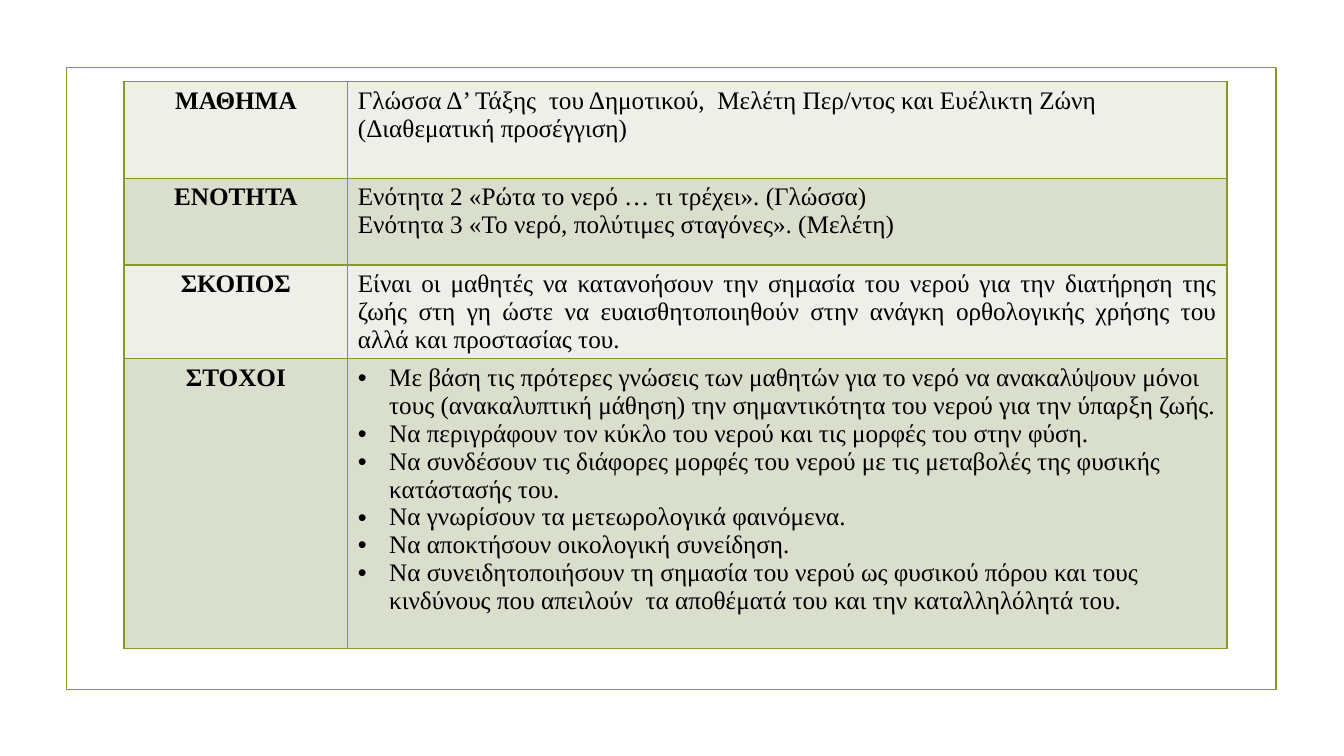
from lxml import etree
from pptx import Presentation
from pptx.dml.color import RGBColor
from pptx.enum.shapes import MSO_SHAPE
from pptx.enum.text import PP_ALIGN
from pptx.oxml.ns import qn
from pptx.util import Inches, Pt

RECT = MSO_SHAPE.RECTANGLE
LEFT, CENTER, JUST = PP_ALIGN.LEFT, PP_ALIGN.CENTER, PP_ALIGN.JUSTIFY
FONT = "Times New Roman"
COLORS = {"olive": "83992A", "light": "EDEFE8", "dark": "D9DECD", "text": "000000"}

# Label, row height, alignment, bulleted, paragraphs
ROWS = [
    ("ΜΑΘΗΜΑ", 0.96, LEFT, False, [
        "Γλώσσα Δ’ Τάξης  του Δημοτικού,  Μελέτη Περ/ντος και Ευέλικτη Ζώνη "
        "(Διαθεματική προσέγγιση)"]),
    ("ΕΝΟΤΗΤΑ", 0.86, LEFT, False, [
        "Ενότητα 2 «Ρώτα το νερό … τι τρέχει». (Γλώσσα)",
        "Ενότητα 3 «Το νερό, πολύτιμες σταγόνες». (Μελέτη)"]),
    ("ΣΚΟΠΟΣ", 0.93, JUST, False, [
        "Είναι οι μαθητές να κατανοήσουν την σημασία του νερού για την διατήρηση "
        "της ζωής στη γη ώστε να ευαισθητοποιηθούν στην ανάγκη ορθολογικής χρήσης "
        "του αλλά και προστασίας του."]),
    ("ΣΤΟΧΟΙ", 2.87, LEFT, True, [
        "Με βάση τις πρότερες γνώσεις των μαθητών για το νερό να ανακαλύψουν μόνοι "
        "τους (ανακαλυπτική μάθηση) την σημαντικότητα του νερού για την ύπαρξη ζωής.",
        "Να περιγράφουν τον κύκλο του νερού και τις μορφές του στην φύση.",
        "Να συνδέσουν τις διάφορες μορφές του νερού με τις μεταβολές της φυσικής "
        "κατάστασής του.",
        "Να γνωρίσουν τα μετεωρολογικά φαινόμενα.",
        "Να αποκτήσουν οικολογική συνείδηση.",
        "Να συνειδητοποιήσουν τη σημασία του νερού ως φυσικού πόρου και τους "
        "κινδύνους που απειλούν  τα αποθέματά του και την καταλληλόλητά του."]),
]


def style_cell(cell, shade):
    """Fill the cell and give it a thin olive border on all sides."""
    cell.fill.solid()
    cell.fill.fore_color.rgb = RGBColor.from_string(COLORS[shade])
    props = cell._tc.get_or_add_tcPr()
    for i, side in enumerate(("lnL", "lnR", "lnT", "lnB")):
        line = etree.Element(qn("a:" + side), w=str(Pt(1)))
        fill = etree.SubElement(line, qn("a:solidFill"))
        etree.SubElement(fill, qn("a:srgbClr"), val=COLORS["olive"])
        props.insert(i, line)


def write_cell(cell, texts, align, bold=False, bullet=False):
    frame = cell.text_frame
    for i, text in enumerate(texts):
        para = frame.add_paragraph() if i else frame.paragraphs[0]
        para.alignment = align
        if bullet:
            props = para._p.get_or_add_pPr()
            props.set("marL", str(Inches(0.31)))
            props.set("indent", str(Inches(-0.31)))
            etree.SubElement(props, qn("a:buFont"), typeface="Arial")
            etree.SubElement(props, qn("a:buChar"), char="•")
        run = para.add_run()
        run.text = text
        run.font.name = FONT
        run.font.size = Pt(18)
        run.font.bold = bold
        run.font.color.rgb = RGBColor.from_string(COLORS["text"])


prs = Presentation()
prs.slide_width, prs.slide_height = Inches(13.33), Inches(7.5)
slide = prs.slides.add_slide(prs.slide_layouts[6])

frame = slide.shapes.add_shape(RECT, Inches(0.66), Inches(0.67), Inches(12), Inches(6.17))
frame.shadow.inherit = False
frame.fill.background()
frame.line.color.rgb = RGBColor.from_string(COLORS["olive"])
frame.line.width = Pt(1.25)

height = sum(row[1] for row in ROWS)
table = slide.shapes.add_table(
    len(ROWS), 2, Inches(1.23), Inches(0.81), Inches(10.94), Inches(height)).table
table.first_row = False
table.horz_banding = False
table.columns[0].width = Inches(2.22)
table.columns[1].width = Inches(8.72)

for i, (label, tall, align, bullet, texts) in enumerate(ROWS):
    table.rows[i].height = Inches(tall)
    head, body = table.cell(i, 0), table.cell(i, 1)
    for cell in (head, body):
        style_cell(cell, "dark" if i % 2 else "light")
    write_cell(head, [label], CENTER, bold=True)
    write_cell(body, texts, align, bullet=bullet)

prs.save("out.pptx")
